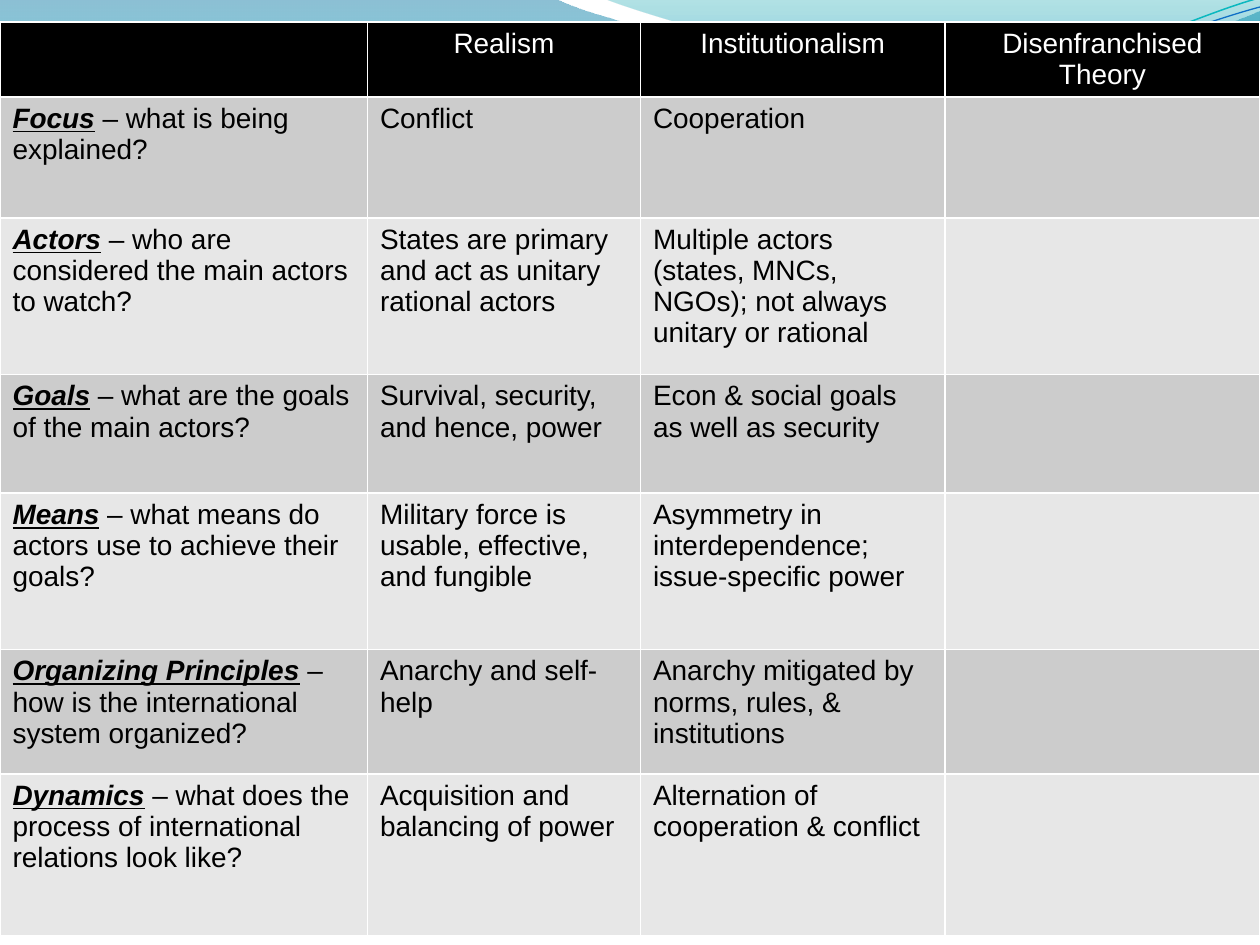
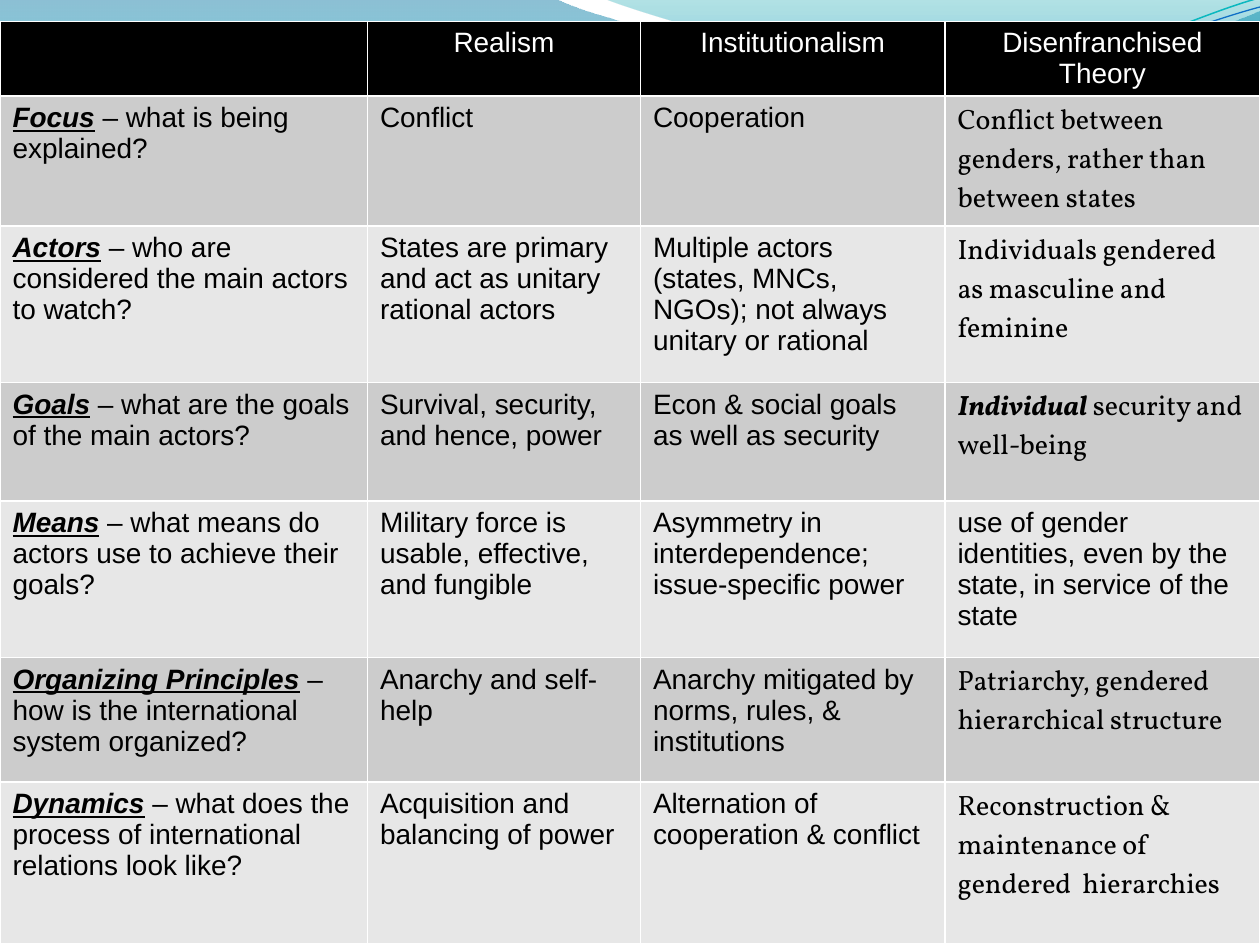
import dataclasses

import lxml.etree
import pptx
import pptx.dml.color
import pptx.enum.text
import pptx.oxml.ns
import pptx.util

Pt = pptx.util.Pt
qn = pptx.oxml.ns.qn


@dataclasses.dataclass(frozen=True)
class Theme:
    white: str = "FFFFFF"
    black: str = "000000"
    dark: str = "CCCCCC"
    light: str = "E7E7E7"
    sans: str = "Arial"
    serif: str = "Vollkorn"
    size: int = 16
    edge: int = 1
    wide: tuple = (("0074A1", 45, 0), ("00C6CF", 55, 1))
    narrow: tuple = (("00A1A9", 30, 0), ("008BBF", 45, 0.8))
    teal: str = "0AB8BF"
    blue: str = "0F6FC6"


THEME = Theme()
PAGE = (0, 0, 720, 540)
COLS = (210, 156, 174, 180)
ROWS = (30, 69.2, 89.4, 67.8, 89.4, 71.2, 92.2)

HEADS = ("", "Realism", "Institutionalism", "Disenfranchised Theory")
BODY = (
    ("*Focus* – what is being explained?", "Conflict", "Cooperation"),
    ("*Actors* – who are  considered the main actors to watch?",
     "States are primary and act as unitary rational actors",
     "Multiple actors (states, MNCs, NGOs); not always unitary or rational"),
    ("*Goals* – what are the goals of the main actors?",
     "Survival, security, and hence, power",
     "Econ & social goals as well as security"),
    ("*Means* – what means do actors use to achieve their goals?",
     "Military force is usable, effective, and fungible",
     "Asymmetry in interdependence; issue-specific power"),
    ("*Organizing Principles* – how is the international system organized?",
     "Anarchy and self-help",
     "Anarchy mitigated by norms, rules, & institutions"),
    ("*Dynamics* – what does the process of international relations look like?",
     "Acquisition and balancing of power",
     "Alternation of cooperation & conflict"),
)
BLANKS = (("", THEME.sans),) * len(BODY)
ANSWERS = (
    ("Conflict between genders, rather than between states", THEME.serif),
    ("Individuals gendered as masculine and feminine", THEME.serif),
    ("*Individual* security and well-being", THEME.serif),
    ("use of gender identities, even by the state, in service of the state",
     THEME.sans),
    ("Patriarchy, gendered hierarchical structure", THEME.serif),
    ("Reconstruction & maintenance of gendered  hierarchies", THEME.serif),
)

WIDE = ((0, 0), (316.8, -0.7),
        (342.7, 12.2, 478.1, 45.4, 545.8, 45.4),
        (614.2, 45.4, 689.8, 18.7, 720, 6.5), (720.7, 25.9),
        (707.8, 31.7, 626.4, 54.7, 537.1, 54),
        (447.8, 54, 275, 20.2, 185, 24.5),
        (92.9, 25.9, 33.1, 59.8, -0.7, 81.4))
NARROW = ((344.9, -0.7), (366.5, 7.9, 491, 44.6, 553.7, 46.8),
          (616.3, 49.7, 691.9, 23, 720, 15.1), (720, 0))
UPPER = ((0, 79.9), (34.6, 67, 113.8, 41, 199.4, 37.4),
         (284.4, 33.8, 427, 64.1, 513.4, 57.6),
         (599.8, 51.1, 675.4, 10.8, 718.6, -1.4))
LOWER = ((0, 74.9), (33.8, 69.1, 118.1, 43.9, 203.8, 40.3),
         (290.2, 36.7, 429.8, 60.5, 516.2, 54),
         (601.9, 48.2, 677.5, 15.1, 720, 4.3))


def color(code):
    return pptx.dml.color.RGBColor.from_string(code)


def curve(slide, box, parts, closed):
    points = [(box[0] + x, box[1] + y) for part in parts
              for x, y in zip(part[::2], part[1::2])]
    pen = slide.shapes.build_freeform(*points[0], scale=Pt(1))
    pen.add_line_segments(points[1:], close=closed)
    shape = pen.convert_to_shape()
    shape.shadow.inherit = False
    lines = iter(shape.element.findall(".//" + qn("a:lnTo")))
    for part in parts[1:]:
        first = next(lines)
        if len(part) == 6:
            bend = lxml.etree.Element(qn("a:cubicBezTo"))
            first.addprevious(bend)
            for line in (first, next(lines), next(lines)):
                bend.append(line[0])
                line.getparent().remove(line)
    return shape


def wave(slide, box, parts, stops):
    shape = curve(slide, box, parts, True)
    shape.line.fill.background()
    shape.fill.gradient()
    shape.fill.gradient_angle = 270
    for stop, (code, alpha, place) in zip(shape.fill.gradient_stops, stops):
        stop.color.rgb = color(code)
        stop.position = place
    tints = shape.element.spPr.findall(".//" + qn("a:gs") + "/" + qn("a:srgbClr"))
    for tint, (code, alpha, place) in zip(tints, stops):
        lxml.etree.SubElement(tint, qn("a:alpha"), val=str(alpha * 1000))
    return shape


def strand(slide, box, parts, code, width):
    shape = curve(slide, box, parts, False)
    shape.fill.background()
    shape.line.color.rgb = color(code)
    shape.line.width = Pt(width)
    return shape


def banner(deck, slide, box):
    shapes = (wave(slide, box, WIDE, THEME.wide),
              wave(slide, box, NARROW, THEME.narrow),
              strand(slide, box, UPPER, THEME.teal, 0.85),
              strand(slide, box, LOWER, THEME.blue, 0.75))
    tree = deck.slide_master.shapes.element
    for spot, shape in enumerate(shapes):
        shape.element.nvSpPr.cNvPr.set("id", str(100 + spot))
        tree.insert(2 + spot, shape.element)


def border(cell):
    props = cell._tc.get_or_add_tcPr()
    for spot, side in enumerate("LRTB"):
        line = lxml.etree.Element(qn("a:ln" + side), w=str(Pt(THEME.edge)))
        fill = lxml.etree.SubElement(line, qn("a:solidFill"))
        lxml.etree.SubElement(fill, qn("a:srgbClr"), val=THEME.white)
        props.insert(spot, line)


def write(cell, text, face, ink, lined):
    para = cell.text_frame.paragraphs[0]
    for spot, piece in enumerate(text.split("*")):
        if piece:
            run = para.add_run()
            run.text = piece
            strong = spot % 2 == 1
            run.font.bold = run.font.italic = strong
            run.font.underline = strong and lined
    for font in (para.font, *(run.font for run in para.runs)):
        font.name = face
        font.size = Pt(THEME.size)
        font.color.rgb = color(ink)
    return para


def grid(slide, box, last):
    frame = slide.shapes.add_table(len(ROWS), len(COLS), *map(Pt, box))
    table = frame.table
    for column, width in zip(table.columns, COLS):
        column.width = Pt(width)
    for row, height in zip(table.rows, ROWS):
        row.height = Pt(height)
    lines = [[(text, THEME.sans) for text in HEADS]]
    lines += [[(text, THEME.sans) for text in row] + [end]
              for row, end in zip(BODY, last)]
    for r, line in enumerate(lines):
        head = r == 0
        shade = THEME.black if head else (THEME.light, THEME.dark)[r % 2]
        ink = THEME.white if head else THEME.black
        for c, (text, face) in enumerate(line):
            cell = table.cell(r, c)
            cell.fill.solid()
            cell.fill.fore_color.rgb = color(shade)
            border(cell)
            if text:
                para = write(cell, text, face, ink, c == 0)
                if head:
                    para.alignment = pptx.enum.text.PP_ALIGN.CENTER


def main():
    deck = pptx.Presentation()
    deck.slide_width, deck.slide_height = map(Pt, PAGE[2:])
    blank = deck.slide_layouts[6]
    for top, last in ((12.6, BLANKS), (12.2, ANSWERS)):
        slide = deck.slides.add_slide(blank)
        if last is BLANKS:
            banner(deck, slide, PAGE)
        grid(slide, (0, top, sum(COLS), sum(ROWS)), last)
    deck.save("out.pptx")


if __name__ == "__main__":
    main()
